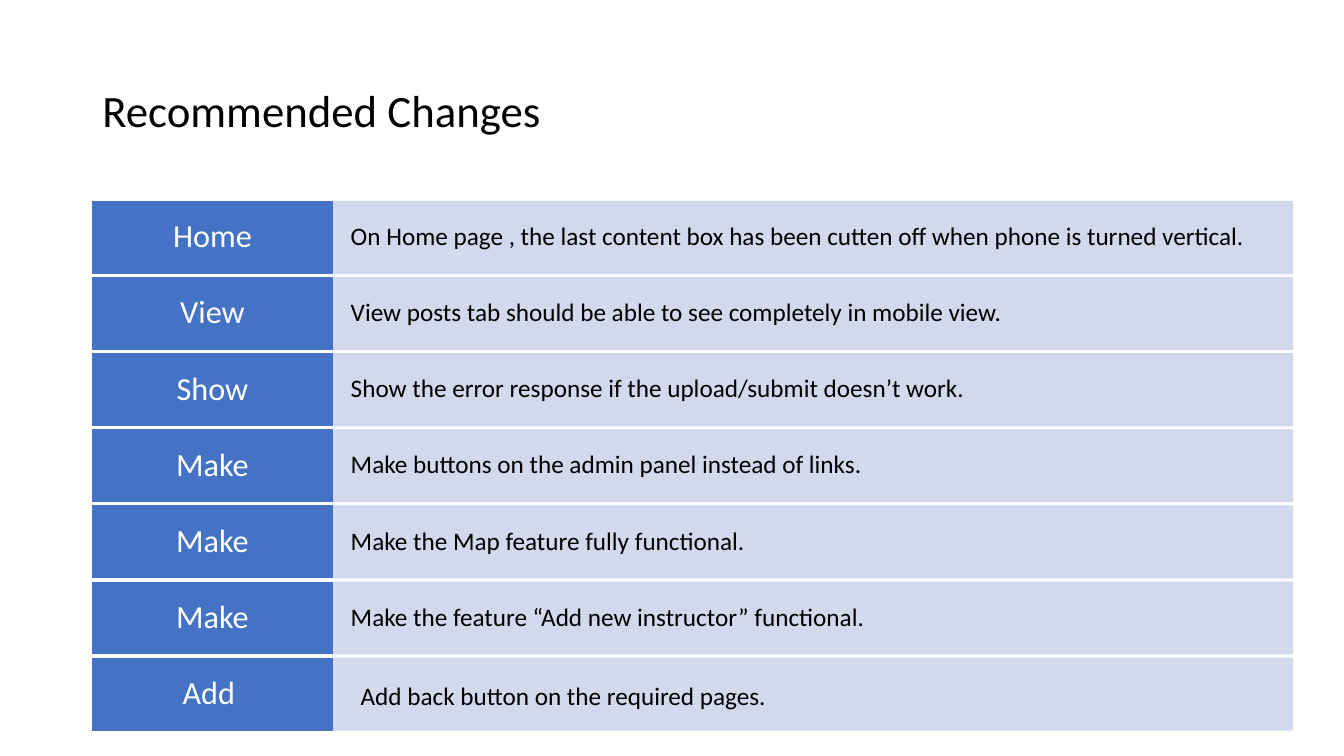
from dataclasses import dataclass

from lxml import etree
from pptx import Presentation
from pptx.dml.color import RGBColor
from pptx.enum.shapes import MSO_SHAPE
from pptx.enum.text import MSO_ANCHOR, PP_ALIGN
from pptx.oxml.ns import qn
from pptx.shapes.autoshape import Shape
from pptx.slide import Slide
from pptx.util import Inches, Pt

RECT = MSO_SHAPE.RECTANGLE
TOP, MIDDLE = MSO_ANCHOR.TOP, MSO_ANCHOR.MIDDLE
LEFT, CENTER = PP_ALIGN.LEFT, PP_ALIGN.CENTER

BLUE = RGBColor(0x44, 0x72, 0xC4)
PALE = RGBColor(0xCF, 0xD5, 0xEA)
BLACK = RGBColor(0, 0, 0)
WHITE = RGBColor(255, 255, 255)

WIDE, HIGH = Inches(13.33), Inches(7.5)
COL, ROW = WIDE / 100, HIGH / 100
EDGE, SPLIT = 6.88, 24.75
FIRST, PITCH, DEPTH = 26.67, 10.07, 9.47


@dataclass(frozen=True)
class Box:
    left: float
    top: float
    width: float
    height: float

    def size(self) -> tuple[int, int, int, int]:
        return (round(self.left * COL), round(self.top * ROW),
                round(self.width * COL), round(self.height * ROW))


@dataclass(frozen=True)
class Style:
    points: int
    color: RGBColor
    align: PP_ALIGN = LEFT
    anchor: MSO_ANCHOR = MIDDLE
    side: float = 0.1
    edge: float = 0.05
    lines: float = 0.9


@dataclass(frozen=True)
class Change:
    label: str
    detail: str


TITLE = Style(32, BLACK)
LABEL = Style(23, WHITE, CENTER, side=0.13, edge=0.07)
DETAIL = Style(18, BLACK, side=0.18, edge=0.18)
NOTE = Style(18, BLACK, anchor=TOP, lines=1.0)

CHANGES = [
    Change("Home", "On Home page , the last content box has been cutten off when phone is turned vertical."),
    Change("View", "View posts tab should be able to see completely in mobile view."),
    Change("Show", "Show the error response if the upload/submit doesn’t work."),
    Change("Make", "Make buttons on the admin panel instead of links."),
    Change("Make", "Make the Map feature fully functional."),
    Change("Make", "Make the feature “Add new instructor” functional."),
    Change("Add ", ""),
]


def write(shape: Shape, text: str, style: Style) -> None:
    frame = shape.text_frame
    frame.word_wrap = True
    frame.vertical_anchor = style.anchor
    frame.margin_left = frame.margin_right = Inches(style.side)
    frame.margin_top = frame.margin_bottom = Inches(style.edge)
    para = frame.paragraphs[0]
    para.alignment = style.align
    para.line_spacing = style.lines
    run = para.add_run()
    run.text = text
    run.font.name = "Calibri"
    run.font.size = Pt(style.points)
    run.font.color.rgb = style.color


def add_text(slide: Slide, box: Box, text: str, style: Style) -> None:
    write(slide.shapes.add_textbox(*box.size()), text, style)


def add_bar(slide: Slide, box: Box, color: RGBColor, alpha: int = 100) -> Shape:
    bar = slide.shapes.add_shape(RECT, *box.size())
    bar.shadow.inherit = False
    bar.fill.solid()
    bar.fill.fore_color.rgb = color
    bar.line.color.rgb = color
    bar.line.width = Pt(1)
    if alpha < 100:
        for tint in bar.element.spPr.iter(qn("a:srgbClr")):
            etree.SubElement(tint, qn("a:alpha")).set("val", str(alpha * 1000))
    return bar


def main() -> None:
    deck = Presentation()
    deck.slide_width, deck.slide_height = WIDE, HIGH
    slide = deck.slides.add_slide(deck.slide_layouts[6])
    add_text(slide, Box(EDGE, 5.33, 86.25, 19.33), "Recommended Changes", TITLE)
    for i, change in enumerate(CHANGES):
        top = FIRST + i * PITCH
        bar = add_bar(slide, Box(SPLIT, top, 71.42, DEPTH), PALE, 90)
        if change.detail:
            write(bar, change.detail, DETAIL)
        tab = add_bar(slide, Box(EDGE, top, SPLIT - EDGE, DEPTH), BLUE)
        write(tab, change.label, LABEL)
    add_text(slide, Box(26.1, 89.33, 36.9, 5.33), "Add back button on the required pages.", NOTE)
    deck.save("out.pptx")


if __name__ == "__main__":
    main()
